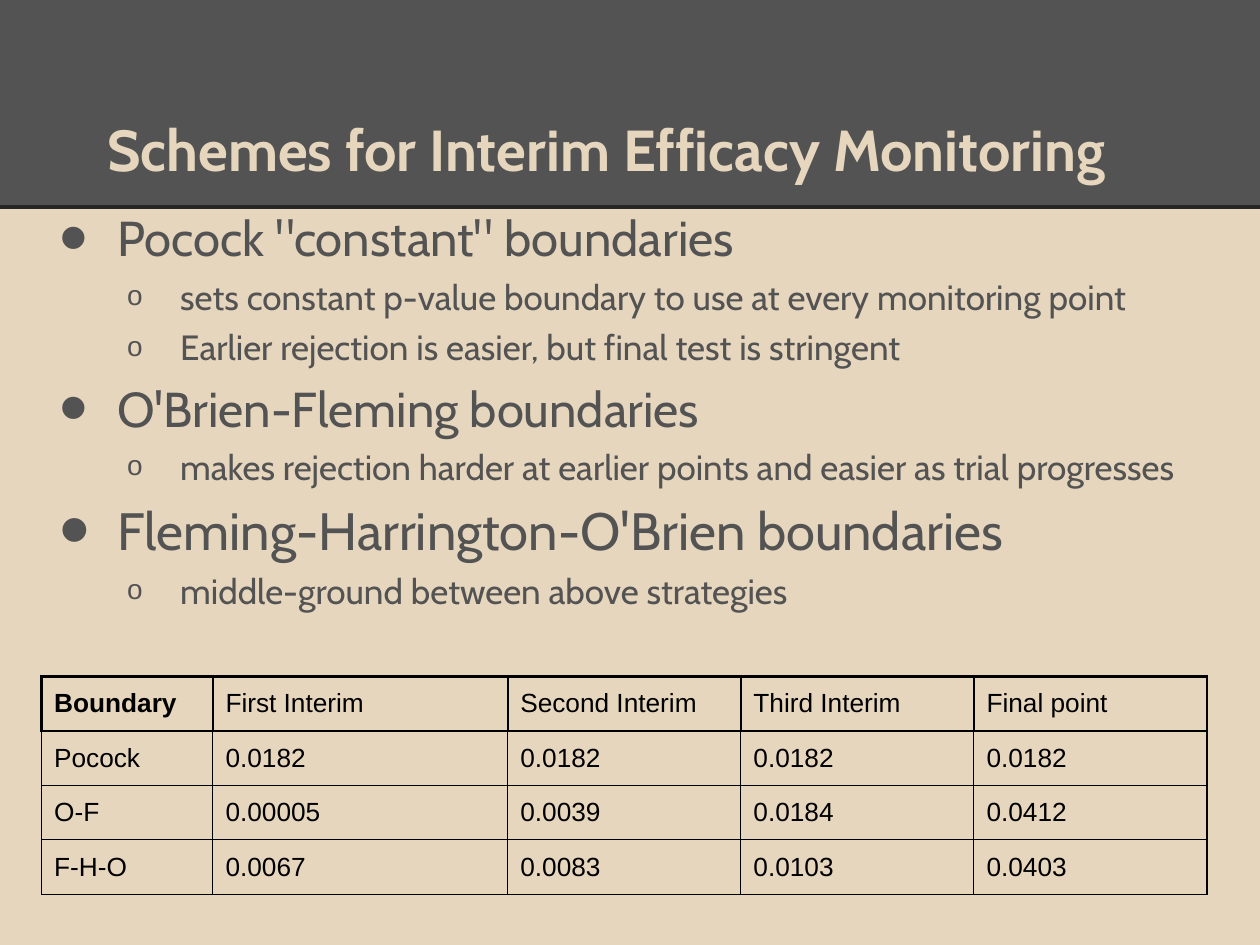
"""Build a slide on interim efficacy monitoring boundaries with a table of p-values."""
from lxml.etree import SubElement
from pptx import Presentation
from pptx.dml.color import RGBColor
from pptx.enum.shapes import MSO_CONNECTOR, MSO_SHAPE
from pptx.enum.text import MSO_ANCHOR, MSO_AUTO_SIZE, PP_ALIGN
from pptx.oxml.ns import qn
from pptx.util import Inches, Pt

COLORS = {"sand": "E6D6BD", "gray": "535353", "rule": "262626", "black": "000000"}
BULLETS = [
    (0, 28, 'Pocock "constant" boundaries'),
    (1, 20, "sets constant p-value boundary to use at every monitoring point"),
    (1, 20, "Earlier rejection is easier, but final test is stringent"),
    (0, 28, "O'Brien-Fleming boundaries"),
    (1, 20, "makes rejection harder at earlier points and easier as trial progresses"),
    (0, 30, "Fleming-Harrington-O'Brien boundaries"),
    (1, 20, "middle-ground between above strategies"),
]
LEVELS = [
    {"margin": 0.5, "indent": -0.46, "before": 6, "char": "•", "percent": 167},
    {"margin": 1, "indent": -0.42, "before": 4.8, "char": "o", "percent": 80},
]
ROWS = [
    ["Boundary", "First Interim", "Second Interim", "Third Interim", "Final point"],
    ["Pocock", "0.0182", "0.0182", "0.0182", "0.0182"],
    ["O-F", "0.00005", "0.0039", "0.0184", "0.0412"],
    ["F-H-O", "0.0067", "0.0083", "0.0103", "0.0403"],
]
COLUMN_WIDTHS = [1.36, 2.34, 1.85, 1.85, 1.85]
ROW_HEIGHT = 0.43


def format_text(paragraph, font_name, size, color, bold=False):
    for run in paragraph.runs:
        run.font.name = font_name
        run.font.size = Pt(size)
        run.font.bold = bold
        run.font.color.rgb = RGBColor.from_string(COLORS[color])


def place_text(shape, left, top, width, height, anchor):
    shape.left, shape.top = Inches(left), Inches(top)
    shape.width, shape.height = Inches(width), Inches(height)
    frame = shape.text_frame
    frame.word_wrap = True
    frame.auto_size = MSO_AUTO_SIZE.NONE
    frame.vertical_anchor = anchor
    frame.margin_left = frame.margin_right = Inches(0.1)
    frame.margin_top = frame.margin_bottom = Inches(0.1)


presentation = Presentation()
presentation.slide_width, presentation.slide_height = Inches(10), Inches(7.5)
slide = presentation.slides.add_slide(presentation.slide_layouts[1])
slide.background.fill.solid()
slide.background.fill.fore_color.rgb = RGBColor.from_string(COLORS["sand"])
title, body = slide.placeholders

band = slide.shapes.add_shape(MSO_SHAPE.RECTANGLE, 0, 0, Inches(10), Inches(1.64))
band.shadow.inherit = False
band.fill.solid()
band.fill.fore_color.rgb = RGBColor.from_string(COLORS["gray"])
band.line.fill.background()

rule = slide.shapes.add_connector(
    MSO_CONNECTOR.STRAIGHT, 0, Inches(1.64), Inches(10), Inches(1.64))
rule.line.color.rgb = RGBColor.from_string(COLORS["rule"])
rule.line.width = Pt(2.25)
SubElement(rule.element.spPr, qn("a:effectLst"))
for shape in (band, rule):
    title.element.addprevious(shape.element)

place_text(title, 0.5, 0.3, 9, 1.25, MSO_ANCHOR.BOTTOM)
title.text_frame.text = "Schemes for Interim Efficacy Monitoring"
heading = title.text_frame.paragraphs[0]
heading.alignment = PP_ALIGN.LEFT
heading_properties = heading._p.get_or_add_pPr()
heading_properties.set("marL", "0")
heading_properties.set("indent", str(Inches(0.25)))
format_text(heading, "Cabin", 33, "sand", bold=True)

place_text(body, 0.33, 1.55, 9.34, 5.43, MSO_ANCHOR.TOP)
body.text_frame.text = "\n".join(text for _, _, text in BULLETS)
for paragraph, (level, size, _) in zip(body.text_frame.paragraphs, BULLETS):
    style = LEVELS[level]
    paragraph.level = level
    paragraph.space_before = Pt(style["before"])
    format_text(paragraph, "Cabin", size, "gray")
    properties = paragraph._p.get_or_add_pPr()
    properties.set("marL", str(Inches(style["margin"])))
    properties.set("indent", str(Inches(style["indent"])))
    bullet_color = SubElement(properties, qn("a:buClr"))
    SubElement(bullet_color, qn("a:srgbClr"), val=COLORS["gray"])
    SubElement(properties, qn("a:buSzPct"), val=str(style["percent"] * 1000))
    SubElement(properties, qn("a:buFont"), typeface="Arial")
    SubElement(properties, qn("a:buChar"), char=style["char"])

table = slide.shapes.add_table(
    len(ROWS), len(COLUMN_WIDTHS), Inches(0.33), Inches(5.37),
    Inches(sum(COLUMN_WIDTHS)), Inches(ROW_HEIGHT * len(ROWS))).table
table.first_row = table.horz_banding = False
for column, width in zip(table.columns, COLUMN_WIDTHS):
    column.width = Inches(width)
for row_index, values in enumerate(ROWS):
    table.rows[row_index].height = Inches(ROW_HEIGHT)
    for column_index, value in enumerate(values):
        cell = table.cell(row_index, column_index)
        cell.text_frame.text = value
        cell.margin_left = cell.margin_right = Inches(0.1)
        cell.margin_top = cell.margin_bottom = Inches(0.1)
        is_corner = row_index == column_index == 0
        format_text(cell.text_frame.paragraphs[0], "Arial", 15, "black", bold=is_corner)
        cell_properties = cell._tc.get_or_add_tcPr()
        for side in ("L", "R", "T", "B"):
            thick = row_index == 0 or (row_index == 1 and side == "T")
            border = SubElement(
                cell_properties, qn(f"a:ln{side}"), w=str(Pt(1.5 if thick else 0.75)))
            border_fill = SubElement(border, qn("a:solidFill"))
            SubElement(border_fill, qn("a:srgbClr"), val=COLORS["black"])
        cell.fill.background()

presentation.save("out.pptx")
